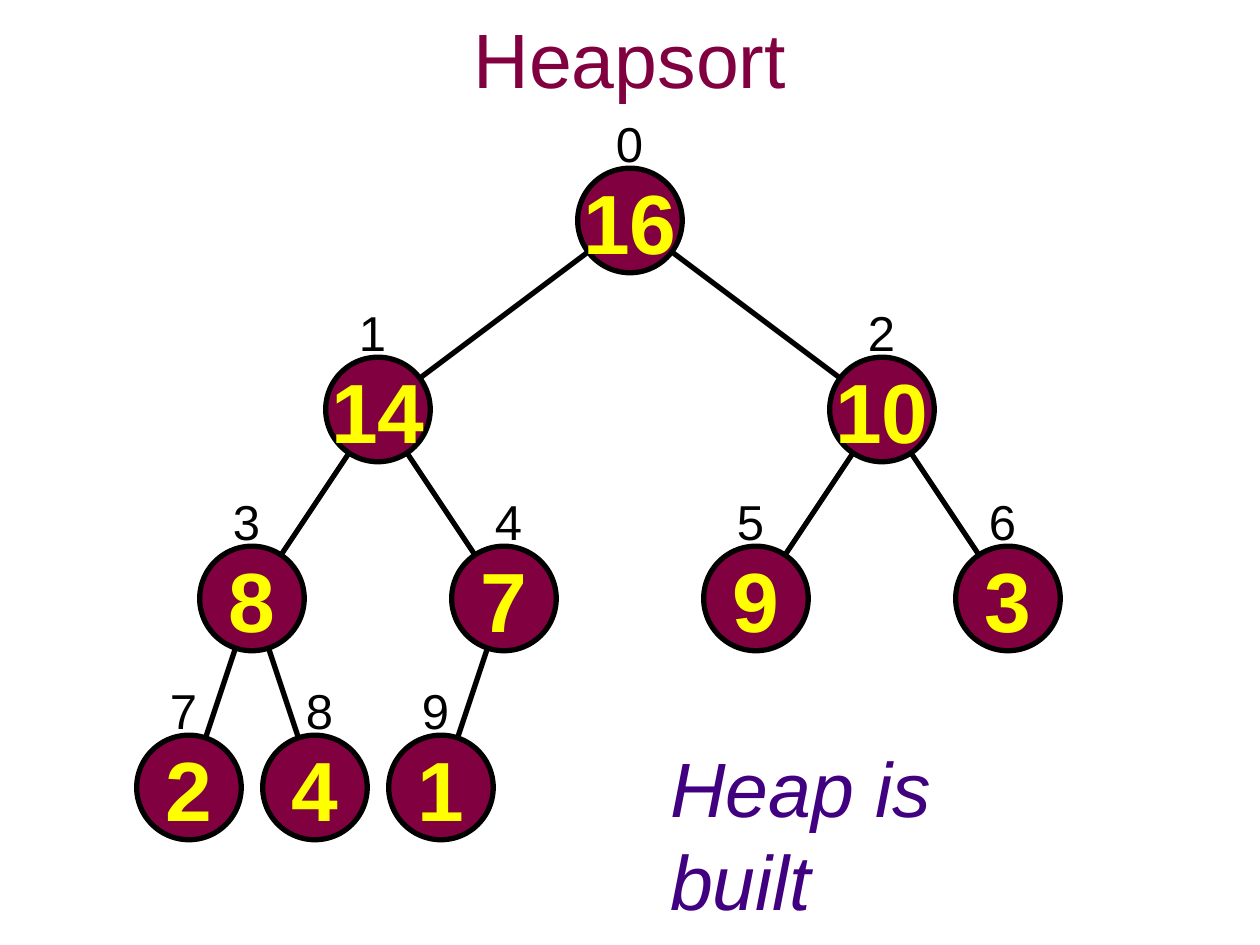
import pptx
import pptx.util
import pptx.dml.color
import pptx.enum.shapes
import pptx.enum.text
import pptx.oxml
from dataclasses import dataclass

Inches = pptx.util.Inches
Shape = pptx.enum.shapes.MSO_SHAPE
Link = pptx.enum.shapes.MSO_CONNECTOR
Anchor = pptx.enum.text.MSO_ANCHOR
Align = pptx.enum.text.PP_ALIGN
Fit = pptx.enum.text.MSO_AUTO_SIZE


@dataclass
class Theme:
    font: str = "Arial"
    wine: str = "800040"
    black: str = "000000"
    yellow: str = "FFFF00"
    violet: str = "400080"
    large: int = 44
    value: int = 48
    index: int = 28
    stroke: int = 3


def color(code):
    return pptx.dml.color.RGBColor.from_string(code)


def apply(target, values):
    for name, value in values.items():
        setattr(target, name, value)


class Sheet:
    def __init__(self, slide, theme):
        self.slide, self.theme = slide, theme

    def letter(self, shape, text, size, ink, frame, align=None, **style):
        apply(shape.text_frame, frame)
        line = shape.text_frame.paragraphs[0]
        line.alignment = align
        run = line.add_run()
        run.text = text
        apply(run.font, {"name": self.theme.font,
                         "size": pptx.util.Pt(size), **style})
        run.font.color.rgb = color(ink)

    def stroke(self, line):
        line.color.rgb = color(self.theme.black)
        line.width = pptx.util.Pt(self.theme.stroke)

    def edge(self, start, end):
        link = self.slide.shapes.add_connector(
            Link.STRAIGHT, *map(Inches, (*start, *end)))
        self.stroke(link.line)
        link._element.spPr.append(pptx.oxml.parse_xml(
            '<a:effectLst xmlns:a='
            '"http://schemas.openxmlformats.org/drawingml/2006/main"/>'))

    def node(self, center, text, size=0.83):
        x, y = center
        disc = self.slide.shapes.add_shape(Shape.OVAL, *map(
            Inches, (x - size / 2, y - size / 2, size, size)))
        disc.shadow.inherit = False
        disc.fill.solid()
        disc.fill.fore_color.rgb = color(self.theme.wine)
        self.stroke(disc.line)
        self.letter(disc, text, self.theme.value, self.theme.yellow,
                    {"word_wrap": False, "vertical_anchor": Anchor.MIDDLE},
                    Align.CENTER, bold=True)

    def label(self, box, text, size, ink, **style):
        area = self.slide.shapes.add_textbox(*map(Inches, box))
        self.letter(area, text, size, ink,
                    {"word_wrap": False, "auto_size": Fit.SHAPE_TO_FIT_TEXT},
                    **style)

    def title(self, box, text):
        area = self.slide.shapes.add_textbox(*map(Inches, box))
        self.letter(area, text, self.theme.large, self.theme.wine,
                    {"word_wrap": True, "vertical_anchor": Anchor.MIDDLE},
                    Align.CENTER)


def place(index):
    """Center of a heap item: each level splits the tree width evenly."""
    depth = (index + 1).bit_length() - 1
    count = 2 ** depth
    column = index + 1 - count
    return 1 + 8 * (column + 0.5) / count, 1.75 + 1.5 * depth


def main():
    deck = pptx.Presentation()
    apply(deck, {"slide_width": Inches(10), "slide_height": Inches(7.5)})
    theme = Theme()
    sheet = Sheet(deck.slides.add_slide(deck.slide_layouts[6]), theme)
    heap = [16, 14, 10, 8, 7, 9, 3, 2, 4, 1]
    shift = {0: 0.21, 2: 0.21, 4: 0.17, 8: 0.17}

    # Edges from parent to child, behind the nodes
    for index in range(1, len(heap)):
        sheet.edge(place((index - 1) // 2), place(index))

    # Title
    sheet.title((0.75, 0.08, 8.5, 0.75), "Heapsort")

    # Nodes with their array indexes
    for index, value in enumerate(heap):
        x, y = place(index)
        sheet.node((x, y), str(value))
        sheet.label((x - shift.get(index, 0.25), y - 0.9, 0.42, 0.57),
                    str(index), theme.index, theme.black)

    # Closing remark
    sheet.label((5.22, 5.83, 3.56, 0.83), "Heap is built",
                theme.large, theme.violet, italic=True)

    deck.save("out.pptx")


if __name__ == "__main__":
    main()
